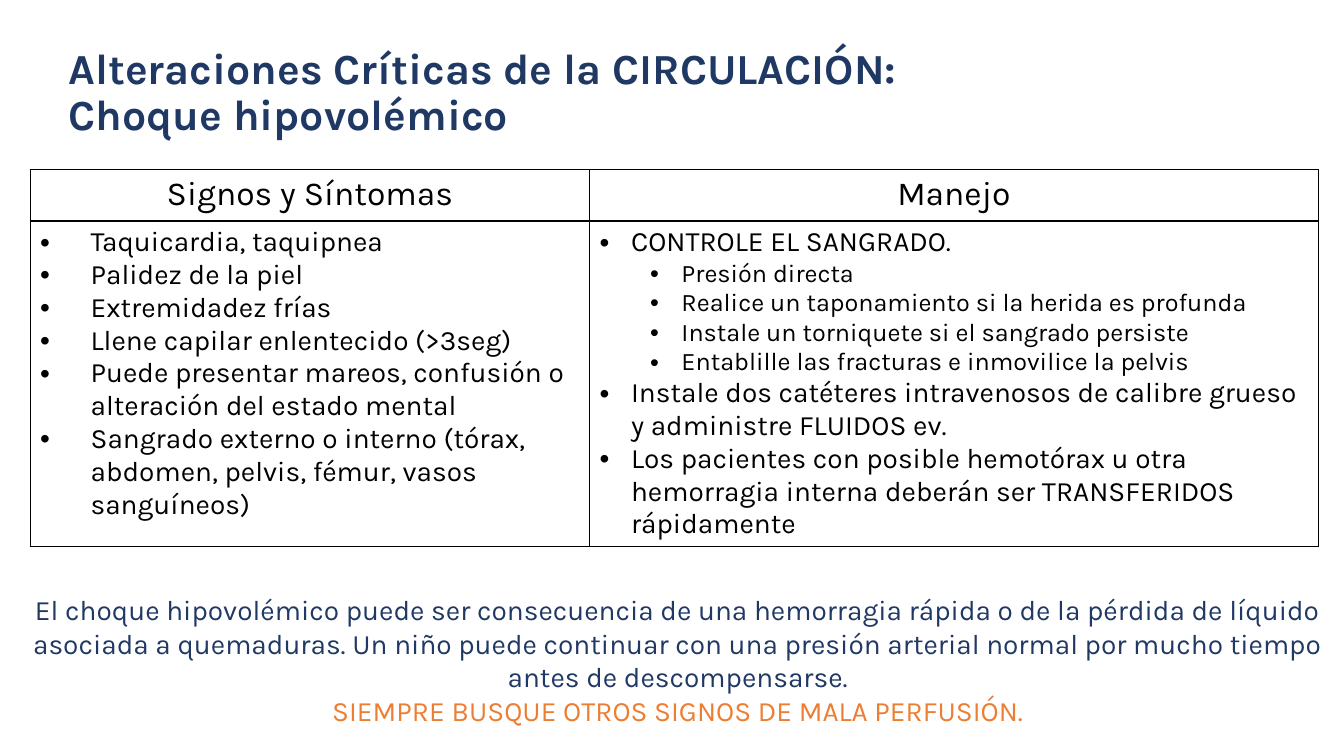
import pptx
import pptx.dml.color
import pptx.enum.text
import pptx.oxml
import pptx.oxml.ns
import pptx.util
from pptx.util import Cm

# Content
TITLE = "Alteraciones Críticas de la CIRCULACIÓN:\vChoque hipovolémico"
HEADERS = ["Signos y Síntomas", "Manejo"]
# Each item is (level, text)
SIGNS = [
    (0, "Taquicardia, taquipnea"),
    (0, "Palidez de la piel"),
    (0, "Extremidadez frías"),
    (0, "Llene capilar enlentecido (>3seg)"),
    (0, "Puede presentar mareos, confusión o alteración del estado mental"),
    (0, "Sangrado externo o interno (tórax, abdomen, pelvis, fémur, vasos sanguíneos)"),
]
MANAGEMENT = [
    (0, "CONTROLE EL SANGRADO."),
    (1, "Presión directa"),
    (1, "Realice un taponamiento si la herida es profunda"),
    (1, "Instale un torniquete si el sangrado persiste"),
    (1, "Entablille las fracturas e inmovilice la pelvis"),
    (0, "Instale dos catéteres intravenosos de calibre grueso y administre FLUIDOS ev."),
    (0, "Los pacientes con posible hemotórax u otra hemorragia interna deberán ser "
        "TRANSFERIDOS rápidamente"),
]
NOTE = ("El choque hipovolémico puede ser consecuencia de una hemorragia rápida o de la "
        "pérdida de líquido asociada a quemaduras. Un niño puede continuar con una presión "
        "arterial normal por mucho tiempo antes de descompensarse.")
WARNING = "SIEMPRE BUSQUE OTROS SIGNOS DE MALA PERFUSIÓN."

# Layout
TITLE_BOX = (Cm(1.47), Cm(1.35), Cm(29.21), Cm(2.03))
NOTE_BOX = (Cm(0.36), Cm(14.81), Cm(33.45), Cm(3.68))
TABLE_LEFT, TABLE_TOP = Cm(0.76), Cm(4.27)
COLUMN_WIDTHS = [Cm(14.1), Cm(18.36)]
ROW_HEIGHTS = [Cm(1.3), Cm(7.95)]
BULLET_INDENTS = [Cm(1.27), Cm(0.79)]
LEVEL_STEP = Cm(1.27)


class Theme:
    font = "Karla"
    navy, note_navy, orange, black = "1F3864", "203864", "ED7D31", "000000"
    title_size, header_size = 30.6, 24
    level_sizes = [20, 18]
    border_width = pptx.util.Pt(1)


CENTER = pptx.enum.text.PP_ALIGN.CENTER
LEFT = pptx.enum.text.PP_ALIGN.LEFT


def format_paragraph(paragraph, size, color, bold=False, alignment=LEFT):
    paragraph.alignment = alignment
    values = {"name": Theme.font, "size": pptx.util.Pt(size), "bold": bold}
    for run in paragraph.runs:
        for name, value in values.items():
            setattr(run.font, name, value)
        run.font.color.rgb = pptx.dml.color.RGBColor.from_string(color)


def add_bullet(paragraph, level, indent):
    paragraph.level = level
    properties = paragraph._p.get_or_add_pPr()
    properties.set("marL", str(level * LEVEL_STEP + indent))
    properties.set("indent", str(-indent))
    namespace = pptx.oxml.ns.nsdecls("a")
    for element in ('buFont {} typeface="Arial"', 'buChar {} char="•"'):
        properties.append(pptx.oxml.parse_xml(f"<a:{element.format(namespace)}/>"))


def add_borders(cell):
    properties = cell._tc.get_or_add_tcPr()
    for side in ("lnL", "lnR", "lnT", "lnB"):
        properties.append(pptx.oxml.parse_xml(
            f'<a:{side} {pptx.oxml.ns.nsdecls("a")} w="{Theme.border_width}">'
            f'<a:solidFill><a:srgbClr val="{Theme.black}"/></a:solidFill></a:{side}>'))


def add_title(slide):
    title = slide.shapes.title
    title.left, title.top, title.width, title.height = TITLE_BOX
    frame = title.text_frame
    frame.text = TITLE
    frame.auto_size = pptx.enum.text.MSO_AUTO_SIZE.NONE
    frame.vertical_anchor = pptx.enum.text.MSO_ANCHOR.MIDDLE
    frame.paragraphs[0].line_spacing = 0.9
    format_paragraph(frame.paragraphs[0], Theme.title_size, Theme.navy, bold=True)


def add_care_table(slide):
    table = slide.shapes.add_table(2, 2, TABLE_LEFT, TABLE_TOP,
                                   sum(COLUMN_WIDTHS), sum(ROW_HEIGHTS)).table
    table.first_row = table.horz_banding = False
    for row, height in zip(table.rows, ROW_HEIGHTS):
        row.height = height
    for index, items in enumerate([SIGNS, MANAGEMENT]):
        table.columns[index].width = COLUMN_WIDTHS[index]
        header, body = table.cell(0, index), table.cell(1, index)
        header.text = HEADERS[index]
        format_paragraph(header.text_frame.paragraphs[0], Theme.header_size,
                         Theme.black, alignment=CENTER)
        body.text = "\n".join(text for level, text in items)
        for paragraph, (level, text) in zip(body.text_frame.paragraphs, items):
            add_bullet(paragraph, level, BULLET_INDENTS[index])
            format_paragraph(paragraph, Theme.level_sizes[level], Theme.black)
        for cell in (header, body):
            add_borders(cell)
            cell.fill.background()


def add_note(slide):
    frame = slide.shapes.add_textbox(*NOTE_BOX).text_frame
    frame.word_wrap = True
    frame.text = f"{NOTE}\n{WARNING}"
    for paragraph, color in zip(frame.paragraphs, [Theme.note_navy, Theme.orange]):
        format_paragraph(paragraph, Theme.level_sizes[0], color, alignment=CENTER)


def main():
    presentation = pptx.Presentation()
    presentation.slide_width, presentation.slide_height = Cm(33.87), Cm(19.05)
    slide = presentation.slides.add_slide(presentation.slide_layouts.get_by_name("Title Only"))
    add_title(slide)
    add_care_table(slide)
    add_note(slide)
    presentation.save("out.pptx")


if __name__ == "__main__":
    main()
